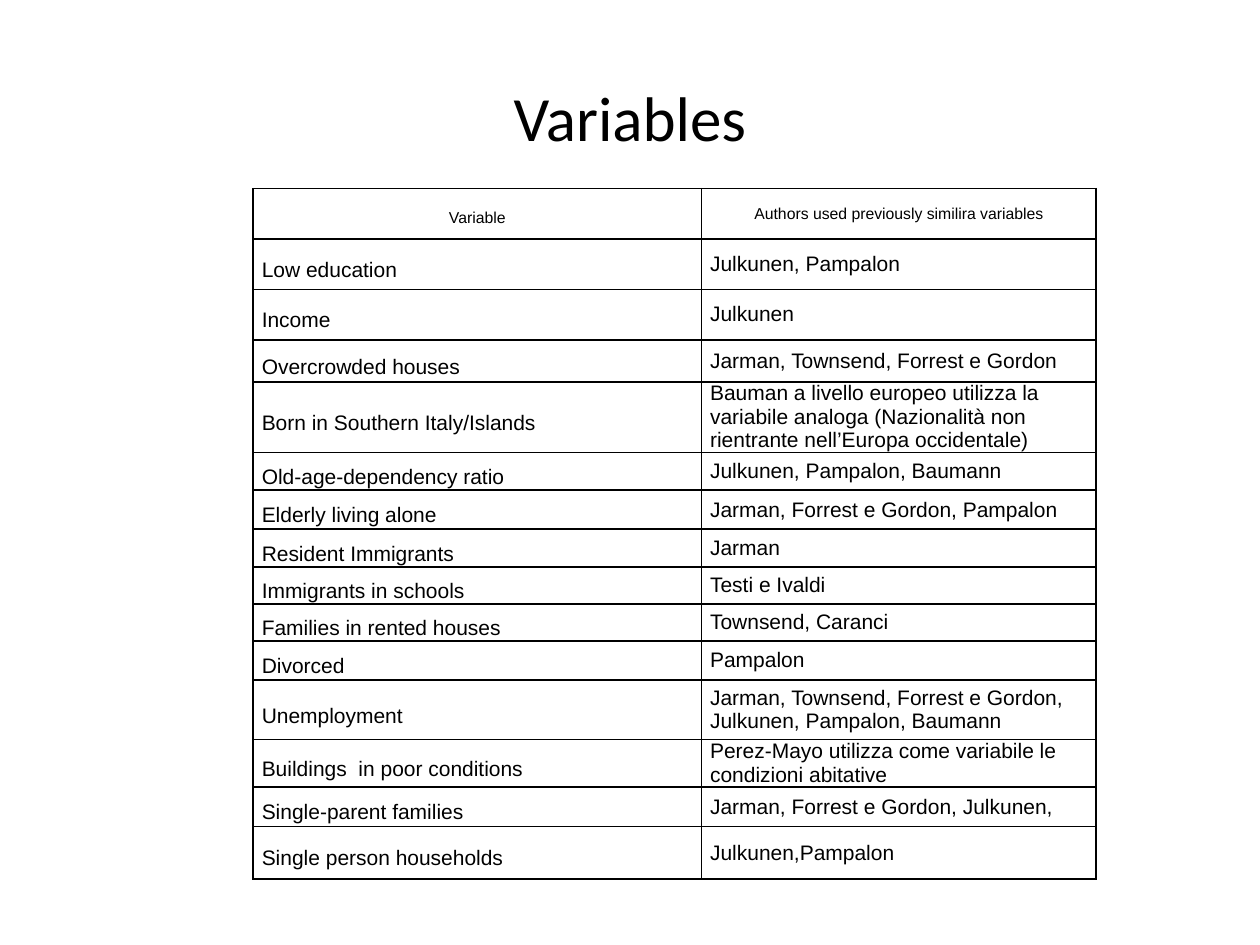
"""Build the slide that lists deprivation variables and the authors who used them."""
from lxml.etree import SubElement
from pptx import Presentation
from pptx.dml.color import RGBColor
from pptx.enum.text import MSO_ANCHOR as Anchor, PP_ALIGN as Align
from pptx.oxml.ns import qn
from pptx.util import Pt

COLORS = {"text": "000000", "border": "000000"}

ROWS = [
    (28.8, "Variable", "Authors used previously similira variables"),
    (28.8, "Low education", "Julkunen, Pampalon"),
    (28.8, "Income", "Julkunen"),
    (24, "Overcrowded houses", "Jarman, Townsend, Forrest e Gordon"),
    (40, "Born in Southern Italy/Islands",
     "Bauman a livello europeo utilizza la variabile analoga "
     "(Nazionalità non rientrante nell’Europa occidentale)"),
    (21.6, "Old-age-dependency ratio", "Julkunen, Pampalon, Baumann"),
    (22.3, "Elderly living alone", "Jarman, Forrest e Gordon, Pampalon"),
    (21.5, "Resident Immigrants", "Jarman"),
    (21.3, "Immigrants in schools", "Testi e Ivaldi"),
    (21.2, "Families in rented houses", "Townsend, Caranci"),
    (22.3, "Divorced", "Pampalon"),
    (34, "Unemployment",
     "Jarman, Townsend, Forrest e Gordon, Julkunen, Pampalon, Baumann"),
    (27, "Buildings  in poor conditions",
     "Perez-Mayo utilizza come variabile le condizioni abitative"),
    (22.8, "Single-parent families", "Jarman, Forrest e Gordon, Julkunen,"),
    (29.8, "Single person households", "Julkunen,Pampalon"),
]


class SlideBuilder:
    """Hold the style and the current slide."""

    title_font = {"name": "Calibri", "size": Pt(36)}
    header_font = {"name": "Arial", "size": Pt(9), "bold": False}
    body_font = {"name": "Arial", "size": Pt(12), "bold": False}
    cell_format = {
        "margin_left": Pt(5), "margin_right": Pt(5),
        "margin_top": 0, "margin_bottom": 0,
        "vertical_anchor": Anchor.MIDDLE,
    }

    def __init__(self, presentation):
        """Add a title-only slide."""
        self.slide = presentation.slides.add_slide(presentation.slide_layouts[5])

    def apply(self, target, values):
        """Set each named attribute of the target."""
        for name, value in values.items():
            setattr(target, name, value)

    def add_text(self, paragraph, text, font, **layout):
        """Put styled text in a paragraph."""
        run = paragraph.add_run()
        run.text = text
        self.apply(run.font, font)
        run.font.color.rgb = RGBColor.from_string(COLORS["text"])
        self.apply(paragraph, layout)

    def title(self, text, left, top, width, height):
        """Place and fill the title placeholder."""
        shape = self.slide.shapes.title
        self.apply(shape, {"left": Pt(left), "top": Pt(top),
                           "width": Pt(width), "height": Pt(height)})
        shape.text_frame.vertical_anchor = Anchor.MIDDLE
        self.add_text(shape.text_frame.paragraphs[0], text, self.title_font,
                      alignment=Align.CENTER)

    def borders(self, cell):
        """Draw a thin line on all four sides of a cell."""
        properties = cell._tc.get_or_add_tcPr()
        for side in ("lnL", "lnR", "lnT", "lnB"):
            line = SubElement(properties, qn(f"a:{side}"), w=str(Pt(1)))
            fill = SubElement(line, qn("a:solidFill"))
            SubElement(fill, qn("a:srgbClr"), val=COLORS["border"])

    def table(self, rows, left, top, widths):
        """Add a ruled table whose rows are (height, text, text...)."""
        height = sum(row[0] for row in rows)
        table = self.slide.shapes.add_table(
            len(rows), len(widths), Pt(left), Pt(top),
            Pt(sum(widths)), Pt(height)).table
        self.apply(table, {"first_row": False, "horz_banding": False})
        for column, width in zip(table.columns, widths):
            column.width = Pt(width)
        for row_index, (row_height, *texts) in enumerate(rows):
            table.rows[row_index].height = Pt(row_height)
            is_header = row_index == 0
            for column_index, text in enumerate(texts):
                cell = table.cell(row_index, column_index)
                self.apply(cell, self.cell_format)
                self.borders(cell)
                cell.fill.background()
                self.add_text(
                    cell.text_frame.paragraphs[0], text,
                    self.header_font if is_header else self.body_font,
                    alignment=Align.CENTER if is_header else Align.LEFT,
                    line_spacing=1.5 if column_index == 0 else 1.0)


def main():
    """Create and save the presentation."""
    presentation = Presentation()
    presentation.slide_width, presentation.slide_height = Pt(720), Pt(540)
    builder = SlideBuilder(presentation)
    builder.title("Variables", 36, 21.6, 648, 90)
    builder.table(ROWS, 144.6, 107.8, (256.2, 225.6))
    presentation.save("out.pptx")


if __name__ == "__main__":
    main()
